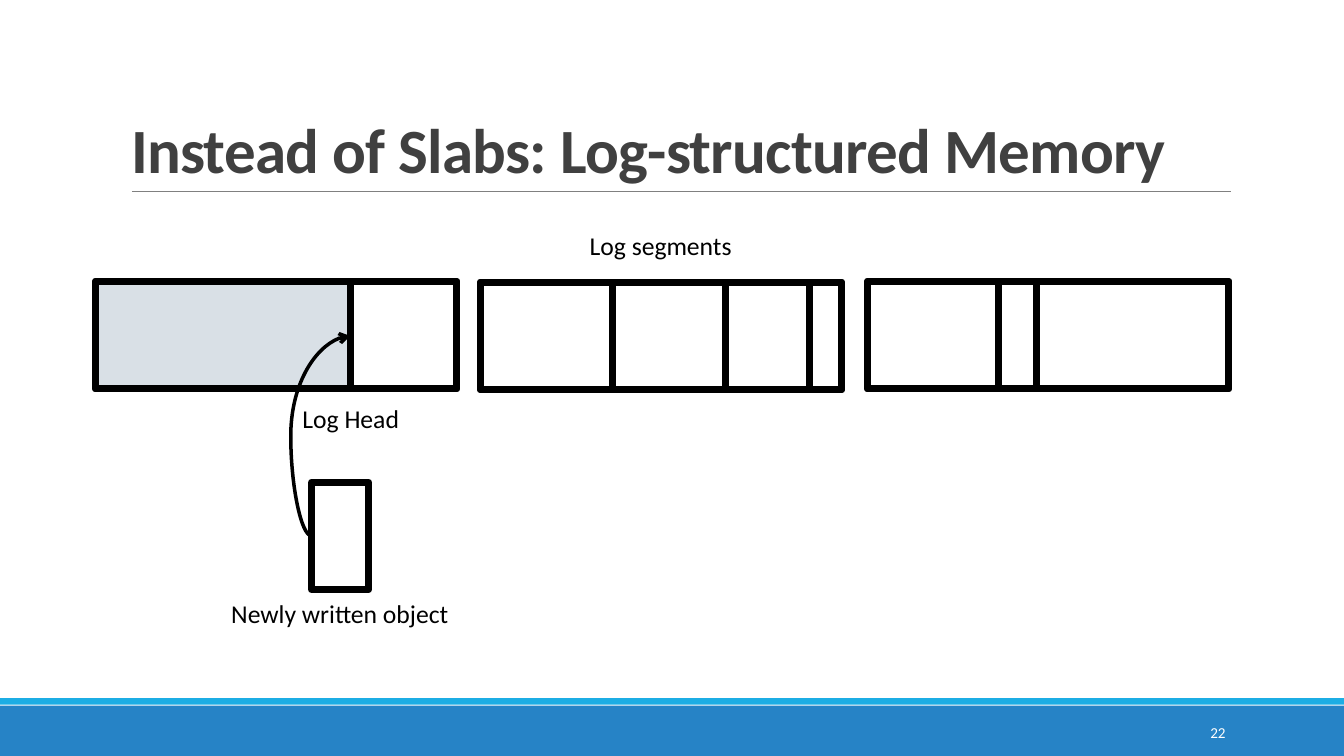
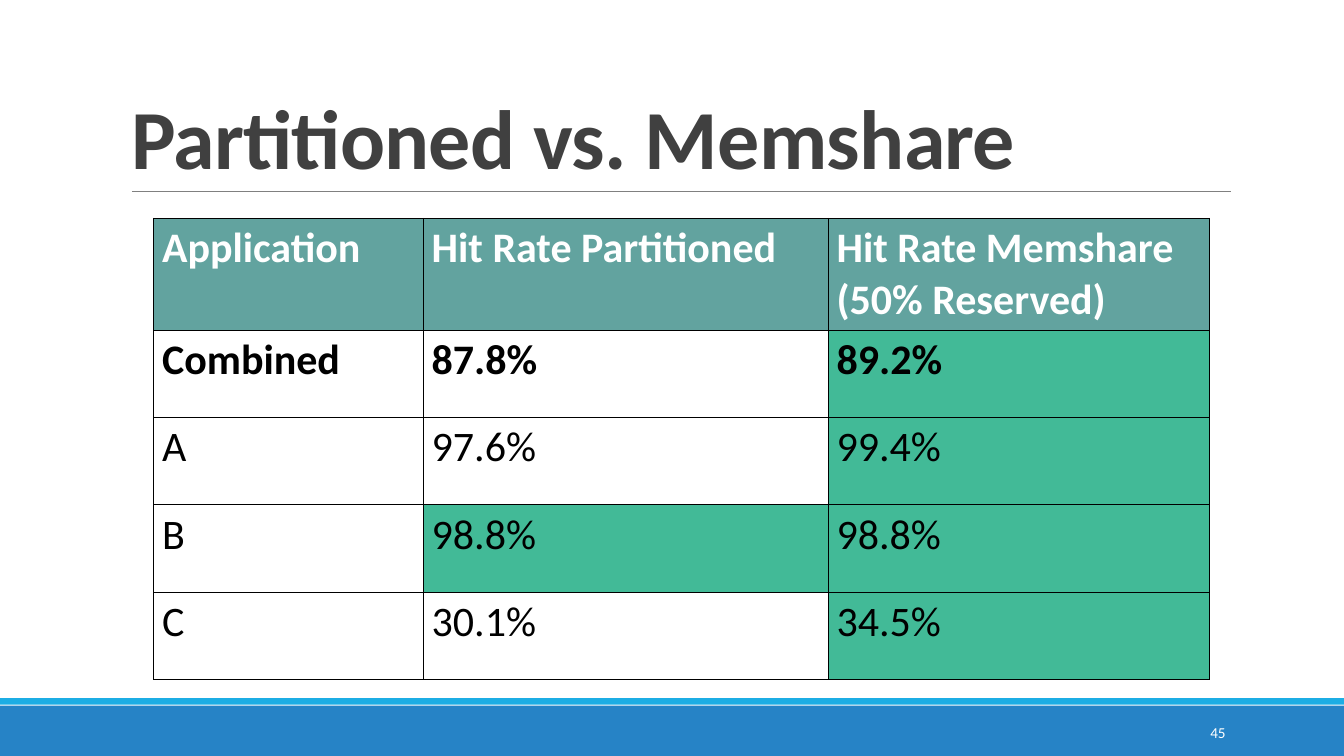
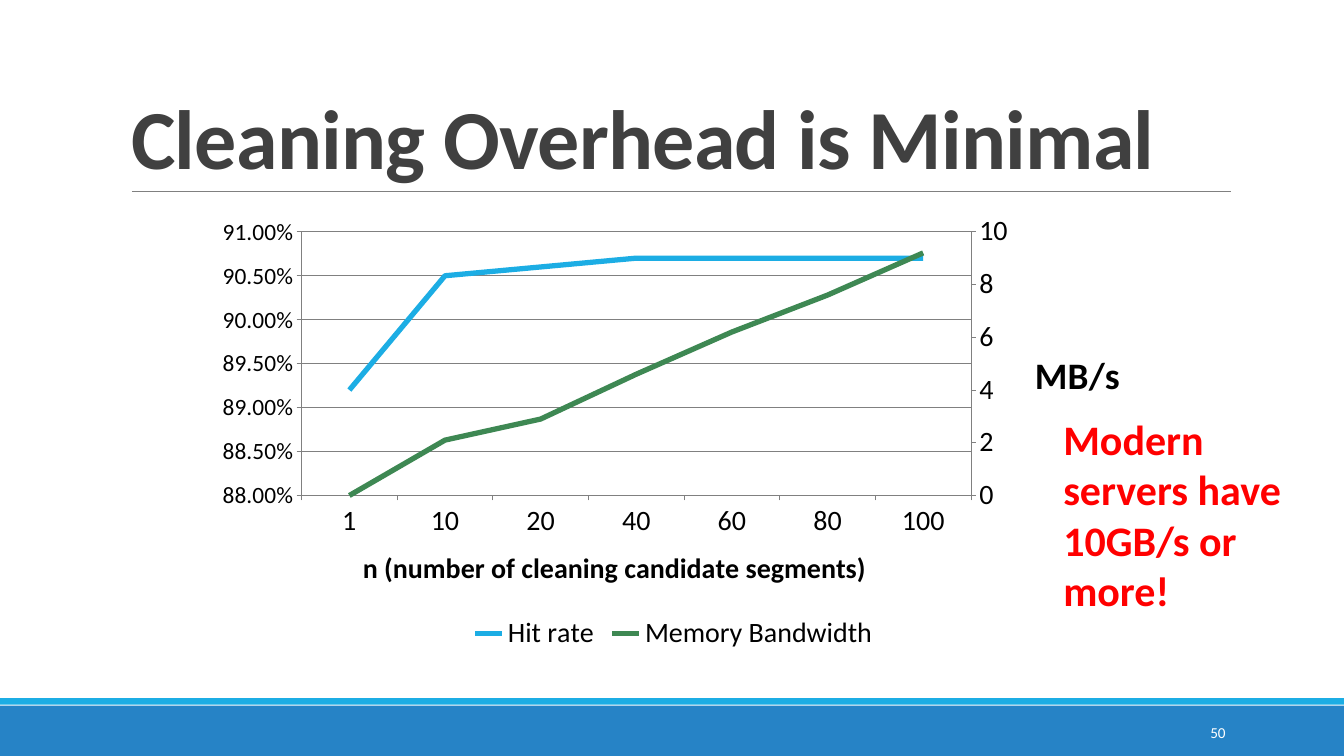
import copy

import lxml.etree
import pptx
import pptx.chart.axis
import pptx.chart.data
import pptx.dml.color
import pptx.enum.chart
import pptx.enum.shapes
import pptx.enum.text
import pptx.oxml.ns
import pptx.util

Inches = pptx.util.Inches
Pt = pptx.util.Pt
qn = pptx.oxml.ns.qn
ALIGN = pptx.enum.text.PP_ALIGN
ANCHOR = pptx.enum.text.MSO_ANCHOR
TICK = pptx.enum.chart.XL_TICK_MARK

FONT = "Calibri"
COLORS = {
    "band": "2683C6",
    "stripe": "1CADE4",
    "rule": "808080",
    "title": "404040",
    "ink": "000000",
    "paper": "FFFFFF",
    "used": "D9E0E6",
    "header": "62A39F",
    "winner": "42BA97",
    "hit_rate": "1CADE4",
    "bandwidth": "3E8853",
    "alert": "FF0000",
}


def color(name):
    return pptx.dml.color.RGBColor.from_string(COLORS[name])


def style_font(font, size, color_name="ink", bold=False):
    font.name = FONT
    font.size = Pt(size)
    font.bold = bold
    font.color.rgb = color(color_name)


def add_span(para, text, size, color_name="ink", bold=False):
    span = para.add_run()
    span.text = text
    style_font(span.font, size, color_name, bold)
    return span


def set_insets(frame, side, top):
    frame.margin_left = frame.margin_right = Inches(side)
    frame.margin_top = frame.margin_bottom = Inches(top)


def add_label(page, box, text, size, color_name="ink", bold=False,
              align=ALIGN.CENTER, anchor=ANCHOR.TOP):
    label = page.shapes.add_textbox(*map(Inches, box))
    frame = label.text_frame
    frame.word_wrap = True
    frame.vertical_anchor = anchor
    para = frame.paragraphs[0]
    para.alignment = align
    add_span(para, text, size, color_name, bold)
    return label


def add_block(page, box, fill, line_width=0):
    block = page.shapes.add_shape(
        pptx.enum.shapes.MSO_SHAPE.RECTANGLE, *map(Inches, box))
    block.shadow.inherit = False
    block.fill.solid()
    block.fill.fore_color.rgb = color(fill)
    if line_width:
        block.line.color.rgb = color("ink")
        block.line.width = Pt(line_width)
    else:
        block.line.fill.background()
    return block


def add_line(page, kind, start, end, color_name, width):
    line = page.shapes.add_connector(
        kind, *map(Inches, start), *map(Inches, end))
    line.line.color.rgb = color(color_name)
    line.line.width = Pt(width)
    lxml.etree.SubElement(line.element.spPr, qn("a:effectLst"))
    return line


def add_page(deck, title, title_size, number):
    """Add a slide with the shared bands, rule, title and number."""
    page = deck.slides.add_slide(deck.slide_layouts[5])
    add_block(page, (0, 8.4, 16, 0.6), "band")
    add_block(page, (0, 8.31, 16, 0.08), "stripe")
    add_line(page, pptx.enum.shapes.MSO_CONNECTOR.STRAIGHT,
             (1.57, 2.28), (14.65, 2.28), "rule", 0.5)

    heading = page.shapes.title
    heading.left, heading.top = Inches(1.44), Inches(0.38)
    heading.width, heading.height = Inches(13.2), Inches(1.9)
    frame = heading.text_frame
    frame.auto_size = pptx.enum.text.MSO_AUTO_SIZE.NONE
    frame.word_wrap = True
    frame.vertical_anchor = ANCHOR.BOTTOM
    set_insets(frame, 0.12, 0.06)
    para = frame.paragraphs[0]
    para.alignment = ALIGN.LEFT
    para.line_spacing = 0.85
    span = add_span(para, title, title_size, "title", True)
    span.font._element.set("spc", "-60")

    number_label = add_label(page, (12.99, 8.48, 1.72, 0.48), str(number), 13,
                             "paper", align=ALIGN.RIGHT, anchor=ANCHOR.MIDDLE)
    set_insets(number_label.text_frame, 0.12, 0.06)
    return page


def add_segment(page, box, parts):
    """Draw a segment and fill it left to right with (width, fill) parts."""
    left, top, _, height = box
    add_block(page, box, "paper", 6)
    for width, fill in parts:
        add_block(page, (left, top, width, height), fill, 6)
        left += width


def add_write_arrow(page, start, end):
    arrow = add_line(page, pptx.enum.shapes.MSO_CONNECTOR.CURVE,
                     start, end, "ink", 3)
    lxml.etree.SubElement(arrow.line._get_or_add_ln(), qn("a:tailEnd"),
                          type="arrow")
    geometry = arrow.element.spPr.find(qn("a:prstGeom"))
    guides = geometry.find(qn("a:avLst"))
    if guides is None:
        guides = lxml.etree.SubElement(geometry, qn("a:avLst"))
    lxml.etree.SubElement(guides, qn("a:gd"), name="adj1", fmla="val -54000")


def build_log_page(deck):
    page = add_page(deck, "Instead of Slabs: Log-structured Memory", 54, 22)
    width, height = 4.3, 1.28
    segments = [
        (1.14, 3.35, [(3.03, "used"), (1.27, "paper")]),
        (5.72, 3.36, [(1.57, "paper"), (1.35, "paper"), (1.0, "paper"),
                      (0.38, "paper")]),
        (10.33, 3.35, [(1.56, "paper"), (0.45, "paper"), (2.29, "paper")]),
    ]
    for left, top, parts in segments:
        add_segment(page, (left, top, width, height), parts)
    add_label(page, (1.11, 2.69, 13.51, 0.47), "Log segments", 22)
    add_label(page, (1.75, 4.75, 4.85, 0.47), "Log Head", 22)

    object_left, object_top = 3.71, 5.74
    add_block(page, (object_left, object_top, 0.68, height), "paper", 6)
    add_write_arrow(page, (object_left, object_top + height / 2), (4.17, 4))
    add_label(page, (1.62, 7.07, 4.85, 0.47), "Newly written object", 22)


def border_cell(cell):
    properties = cell._tc.get_or_add_tcPr()
    for position, side in enumerate(("lnL", "lnR", "lnT", "lnB")):
        edge = lxml.etree.Element(qn("a:" + side), w=str(Pt(1)))
        fill = lxml.etree.SubElement(edge, qn("a:solidFill"))
        lxml.etree.SubElement(fill, qn("a:srgbClr"), val=COLORS["ink"])
        properties.insert(position, edge)


def add_rate_table(page, box, widths, heights, rows, winners):
    table = page.shapes.add_table(
        len(rows), len(widths), *map(Inches, box)).table
    table.first_row = table.horz_banding = False
    for column, width in zip(table.columns, widths):
        column.width = Inches(width)
    for row, height in zip(table.rows, heights):
        row.height = Inches(height)
    for r, texts in enumerate(rows):
        for c, text in enumerate(texts):
            cell = table.cell(r, c)
            fill = "winner" if (r, c) in winners else "paper"
            cell.fill.solid()
            cell.fill.fore_color.rgb = color("header" if r == 0 else fill)
            border_cell(cell)
            frame = cell.text_frame
            for index, line in enumerate(text.split("\n")):
                para = frame.add_paragraph() if index else frame.paragraphs[0]
                add_span(para, line, 36, "ink" if r else "paper", r < 2)


def build_table_page(deck):
    page = add_page(deck, "Partitioned vs. Memshare", 72, 45)
    rows = [
        ("Application", "Hit Rate Partitioned",
         "Hit Rate Memshare\n(50% Reserved)"),
        ("Combined", "87.8%", "89.2%"),
        ("A", "97.6%", "99.4%"),
        ("B", "98.8%", "98.8%"),
        ("C", "30.1%", "34.5%"),
    ]
    winners = {(1, 2), (2, 2), (3, 1), (3, 2), (4, 2)}
    add_rate_table(page, (1.83, 2.6, 12.57, 5.49), (3.21, 4.82, 4.54),
                   (1.33, 1.04, 1.04, 1.04, 1.04), rows, winners)


def place_part(holder, index, size, inner=False, **places):
    """Lay out a chart part; places are inches within the chart's size."""
    layout = holder.find(qn("c:layout"))
    if layout is None:
        layout = lxml.etree.Element(qn("c:layout"))
        holder.insert(index, layout)
    manual = lxml.etree.SubElement(layout, qn("c:manualLayout"))
    settings = {"layoutTarget": "inner"} if inner else {}
    settings.update(xMode="edge", yMode="edge")
    for name, value in places.items():
        settings[name] = value / size[0 if name in "xw" else 1]
    for name, value in settings.items():
        lxml.etree.SubElement(manual, qn("c:" + name), val=str(value))


def style_axis(axis, size):
    style_font(axis.tick_labels.font, size)
    axis.major_tick_mark = TICK.OUTSIDE
    axis.minor_tick_mark = TICK.NONE
    axis.format.line.color.rgb = color("rule")
    axis.format.line.width = Pt(0.75)


def scale_axis(axis, low, high, step, number_format):
    axis.minimum_scale, axis.maximum_scale = low, high
    axis.major_unit = step
    axis.tick_labels.number_format = number_format
    axis.tick_labels.number_format_is_linked = False


def title_axis(axis, text, font_size, size, x, y):
    para = axis.axis_title.text_frame.paragraphs[0]
    add_span(para, text, font_size, bold=True)
    title = axis._element.find(qn("c:title"))
    title.find(".//" + qn("a:bodyPr")).set("rot", "0")
    place_part(title, 1, size, x=x, y=y)


def split_second_series(chart):
    """Move the last series to its own axes and return the new value axis."""
    area = chart._chartSpace.chart.plotArea
    first = area.find(qn("c:lineChart"))
    second = copy.deepcopy(first)
    first.remove(first.findall(qn("c:ser"))[1])
    second.remove(second.findall(qn("c:ser"))[0])
    first.addnext(second)

    category = copy.deepcopy(area.find(qn("c:catAx")))
    value = copy.deepcopy(area.find(qn("c:valAx")))
    area.find(qn("c:valAx")).addnext(value)
    value.addnext(category)
    ids = ("50010", "50020")
    for link, new_id in zip(second.findall(qn("c:axId")), ids):
        link.set("val", new_id)
    for axis, own, other in ((category, *ids), (value, *reversed(ids))):
        axis.find(qn("c:axId")).set("val", own)
        axis.find(qn("c:crossAx")).set("val", other)
    value.find(qn("c:axPos")).set("val", "r")
    crosses = value.find(qn("c:crosses"))
    if crosses is None:
        crosses = lxml.etree.Element(qn("c:crosses"))
        value.find(qn("c:crossAx")).addnext(crosses)
    crosses.set("val", "max")

    pptx.chart.axis.CategoryAxis(category).visible = False
    right_axis = pptx.chart.axis.ValueAxis(value)
    right_axis.has_major_gridlines = False
    return right_axis


def add_overhead_chart(page, box):
    size = box[2:]
    data = pptx.chart.data.CategoryChartData()
    data.categories = ["1", "10", "20", "40", "60", "80", "100"]
    data.add_series("Hit rate", (0.892, 0.905, 0.906, 0.907,
                                 0.907, 0.907, 0.907))
    data.add_series("Memory Bandwidth", (0, 2.1, 2.9, 4.6, 6.2, 7.6, 9.2))
    chart = page.shapes.add_chart(
        pptx.enum.chart.XL_CHART_TYPE.LINE, *map(Inches, box), data).chart
    style_font(chart.font, 10)
    chart.has_title = False
    chart.has_legend = True
    chart.legend.position = pptx.enum.chart.XL_LEGEND_POSITION.BOTTOM
    chart.legend.include_in_layout = False
    style_font(chart.legend.font, 24)

    plot = chart.plots[0]
    plot.vary_by_categories = False
    for series, name in zip(plot.series, ("hit_rate", "bandwidth")):
        series.smooth = False
        series.marker.style = pptx.enum.chart.XL_MARKER_STYLE.NONE
        series.format.line.color.rgb = color(name)
        series.format.line.width = Pt(4.5)

    left_axis = chart.value_axis
    style_axis(chart.category_axis, 24)
    style_axis(left_axis, 20)
    left_axis.has_major_gridlines = True
    grid = left_axis.major_gridlines.format.line
    grid.color.rgb = color("rule")
    grid.width = Pt(0.75)

    right_axis = split_second_series(chart)
    style_axis(right_axis, 24)
    scale_axis(left_axis, 0.88, 0.91, 0.005, "0.00%")
    scale_axis(right_axis, 0, 10, 2, "General")
    title_axis(chart.category_axis,
               "n (number of cleaning candidate segments)", 24, size,
               1.84, 4.01)
    title_axis(right_axis, "MB/s", 32, size, 9.82, 1.62)
    place_part(chart._chartSpace.chart.plotArea, 0, size, inner=True,
               x=1.17, y=0.3, w=7.97, h=3.14)


def build_chart_page(deck):
    page = add_page(deck, "Cleaning Overhead is Minimal", 72, 50)
    add_overhead_chart(page, (2.42, 2.46, 11.2, 5.35))
    add_label(page, (12.56, 4.87, 3.44, 2.52),
              "Modern servers have 10GB/s or more!", 36, "alert", True,
              ALIGN.LEFT)


def main():
    deck = pptx.Presentation()
    deck.slide_width, deck.slide_height = Inches(16), Inches(9)
    build_log_page(deck)
    build_table_page(deck)
    build_chart_page(deck)
    deck.save("out.pptx")


if __name__ == "__main__":
    main()
